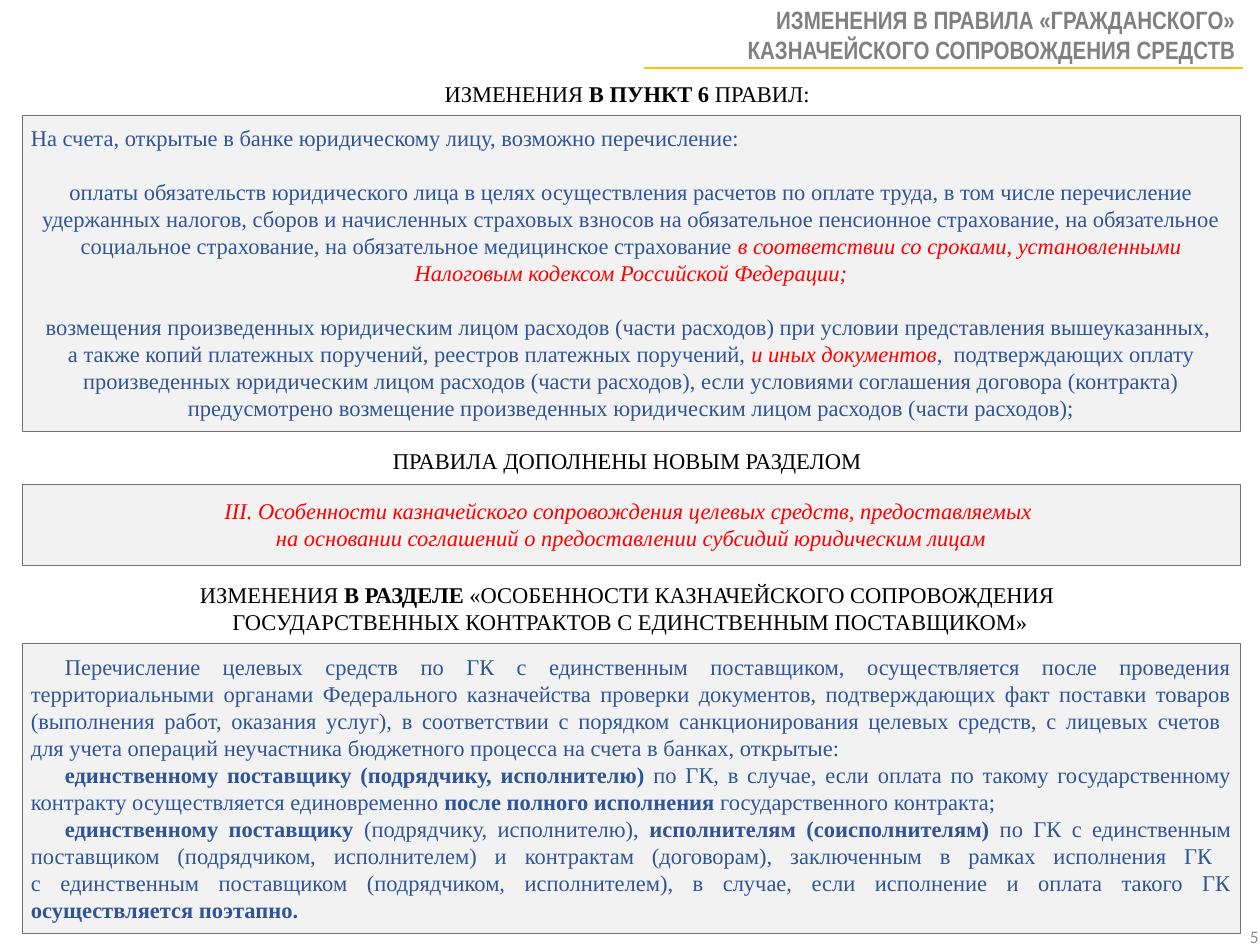
from dataclasses import dataclass

from lxml import etree
from pptx import Presentation
from pptx import util as u
from pptx.dml.color import RGBColor
from pptx.enum import shapes, text
from pptx.oxml.ns import qn

PX = 10160  # 90 px to the inch
WIDTH, HEIGHT = 1260, 945
INSET_X, INSET_Y = 9, 4
PANEL_LEFT, PANEL_WIDTH = 22, 1218
PANEL_OPACITY = 69
LINE_GAP = 21.6  # height of one 18 pt line, in points

BLACK = RGBColor(0x00, 0x00, 0x00)
BLUE = RGBColor(0x2F, 0x55, 0x97)
RED = RGBColor(0xFF, 0x00, 0x00)
GOLD = RGBColor(0xFF, 0xC0, 0x00)
TITLE_GRAY = RGBColor(0x80, 0x80, 0x80)
NUMBER_GRAY = RGBColor(0x8C, 0x8C, 0x8C)
PANEL_FILL = RGBColor(0xED, 0xED, 0xED)
PANEL_LINE = RGBColor(0x76, 0x71, 0x71)

LEFT, CENTER, RIGHT, JUSTIFY = (
    text.PP_ALIGN.LEFT, text.PP_ALIGN.CENTER, text.PP_ALIGN.RIGHT, text.PP_ALIGN.JUSTIFY)


@dataclass(frozen=True)
class Span:
    text: str
    bold: bool = False
    accent: bool = False  # red italics


@dataclass(frozen=True)
class Para:
    spans: tuple[Span, ...]
    align: int = CENTER
    before: float = 0
    indent: int = 0


@dataclass(frozen=True)
class Block:
    top: int
    height: int
    paras: tuple[Para, ...]


HEADINGS = (
    Block(76, 36, (Para((
        Span("ИЗМЕНЕНИЯ "), Span("В ПУНКТ 6 ", bold=True), Span("ПРАВИЛ: "))),)),
    Block(443, 36, (Para((Span("ПРАВИЛА ДОПОЛНЕНЫ НОВЫМ РАЗДЕЛОМ "),)),)),
    Block(577, 64, (Para((
        Span("ИЗМЕНЕНИЯ "), Span("В РАЗДЕЛЕ ", bold=True),
        Span("«ОСОБЕННОСТИ КАЗНАЧЕЙСКОГО СОПРОВОЖДЕНИЯ \n"
             "ГОСУДАРСТВЕННЫХ КОНТРАКТОВ С ЕДИНСТВЕННЫМ ПОСТАВЩИКОМ»"))),)),
)

PANELS = (
    Block(115, 316, (
        Para((Span("На счета, открытые в банке юридическому лицу, возможно перечисление:"),),
             align=LEFT),
        Para((
            Span("оплаты обязательств юридического лица в целях осуществления расчетов по оплате "
                 "труда, в том числе перечисление удержанных налогов, сборов и начисленных "
                 "страховых взносов на обязательное пенсионное страхование, на обязательное "
                 "социальное страхование, на обязательное медицинское страхование "),
            Span("в соответствии со сроками, установленными Налоговым кодексом "
                 "Российской Федерации;", accent=True)), before=LINE_GAP),
        Para((
            Span("возмещения произведенных юридическим лицом расходов (части расходов) при "
                 "условии представления вышеуказанных, \nа также копий платежных поручений, "
                 "реестров платежных поручений, "),
            Span("и иных документов", accent=True),
            Span(",  подтверждающих оплату произведенных юридическим лицом расходов (части "
                 "расходов), если условиями соглашения договора (контракта) предусмотрено "
                 "возмещение произведенных юридическим лицом расходов (части расходов);")),
            before=LINE_GAP),
    )),
    Block(484, 81, (Para((
        Span("III. Особенности казначейского сопровождения целевых средств, предоставляемых \n"
             "на основании соглашений о предоставлении субсидий юридическим лицам",
             accent=True),)),)),
    Block(643, 290, tuple(Para(spans, align=JUSTIFY, indent=34) for spans in (
        (Span("Перечисление целевых средств по ГК с единственным поставщиком, осуществляется "
              "после проведения территориальными органами Федерального казначейства проверки "
              "документов, подтверждающих факт поставки товаров (выполнения работ, оказания "
              "услуг), в соответствии с порядком санкционирования целевых средств, с лицевых "
              "счетов \nдля учета операций неучастника бюджетного процесса на счета в банках, "
              "открытые:"),),
        (Span("единственному поставщику (подрядчику, исполнителю) ", bold=True),
         Span("по ГК, в случае, если оплата по такому государственному контракту "
              "осуществляется единовременно "),
         Span("после полного исполнения ", bold=True),
         Span("государственного контракта;")),
        (Span("единственному поставщику", bold=True),
         Span(" (подрядчику, исполнителю), "),
         Span("исполнителям (соисполнителям) ", bold=True),
         Span("по ГК с единственным поставщиком (подрядчиком, исполнителем) и контрактам "
              "(договорам), заключенным в рамках исполнения ГК \nс единственным поставщиком "
              "(подрядчиком, исполнителем), в случае, если исполнение и оплата такого ГК "),
         Span("осуществляется поэтапно. ", bold=True)),
    ))),
)

TITLE = tuple(Para((Span(line, bold=True),), align=RIGHT) for line in (
    "ИЗМЕНЕНИЯ В ПРАВИЛА «ГРАЖДАНСКОГО» ",
    "КАЗНАЧЕЙСКОГО СОПРОВОЖДЕНИЯ СРЕДСТВ "))


def px(*lengths: int) -> list[u.Emu]:
    return [u.Emu(length * PX) for length in lengths]


def write(box, paras: tuple[Para, ...], *, font="Times New Roman", size=18, color=BLACK,
          anchor=text.MSO_ANCHOR.TOP, wrap=True, insets=(INSET_X, INSET_Y)) -> None:
    frame = box.text_frame
    frame.auto_size = text.MSO_AUTO_SIZE.NONE
    frame.word_wrap = wrap
    frame.vertical_anchor = anchor
    frame.margin_left = frame.margin_right = px(insets[0])[0]
    frame.margin_top = frame.margin_bottom = px(insets[1])[0]
    for index, item in enumerate(paras):
        para = frame.add_paragraph() if index else frame.paragraphs[0]
        para.alignment = item.align
        para.space_before = u.Pt(item.before)
        if item.indent:
            para._p.get_or_add_pPr().set("indent", str(item.indent * PX))
        for span in item.spans:
            for number, line in enumerate(span.text.split("\n")):
                if number:
                    para.add_line_break()
                run = para.add_run()
                run.text = line
                run.font.name = font
                run.font.size = u.Pt(size)
                run.font.bold = span.bold
                run.font.italic = span.accent
                run.font.color.rgb = RED if span.accent else color


def add_panel(slide, block: Block) -> None:
    panel = slide.shapes.add_shape(
        shapes.MSO_SHAPE.RECTANGLE, *px(PANEL_LEFT, block.top, PANEL_WIDTH, block.height))
    panel.shadow.inherit = False
    panel.fill.solid()
    panel.fill.fore_color.rgb = PANEL_FILL
    fill_color = panel._element.spPr.find(f"{qn('a:solidFill')}/{qn('a:srgbClr')}")
    etree.SubElement(fill_color, qn("a:alpha")).set("val", str(PANEL_OPACITY * 1000))
    panel.line.color.rgb = PANEL_LINE
    panel.line.width = u.Pt(0.25)
    write(panel, block.paras, color=BLUE, anchor=text.MSO_ANCHOR.MIDDLE)


def add_heading(slide, block: Block) -> None:
    box = slide.shapes.add_textbox(*px(0, block.top, WIDTH, block.height))
    write(box, block.paras)


def add_title(slide) -> None:
    title = slide.shapes.title
    title.left, title.top, title.width, title.height = px(630, 0, 620, 100)
    write(title, TITLE, font="Arial Narrow", size=20, color=TITLE_GRAY)
    rule = slide.shapes.add_connector(
        shapes.MSO_CONNECTOR.STRAIGHT, *px(644, 68, 1243, 68))
    rule.line.color.rgb = GOLD
    rule.line.width = u.Pt(2)
    etree.SubElement(rule._element.spPr, qn("a:effectLst"))


def add_page_number(slide) -> None:
    box = slide.shapes.add_textbox(*px(1250, 926, 10, 19))
    write(box, (Para((Span("5"),), align=LEFT),), font="Calibri", size=14,
          color=NUMBER_GRAY, wrap=False, insets=(0, 0))


def main() -> None:
    deck = Presentation()
    deck.slide_width, deck.slide_height = px(WIDTH, HEIGHT)
    slide = deck.slides.add_slide(deck.slide_layouts[5])
    add_title(slide)
    for heading, panel in zip(HEADINGS, PANELS):
        add_heading(slide, heading)
        add_panel(slide, panel)
    add_page_number(slide)
    deck.save("out.pptx")


if __name__ == "__main__":
    main()
